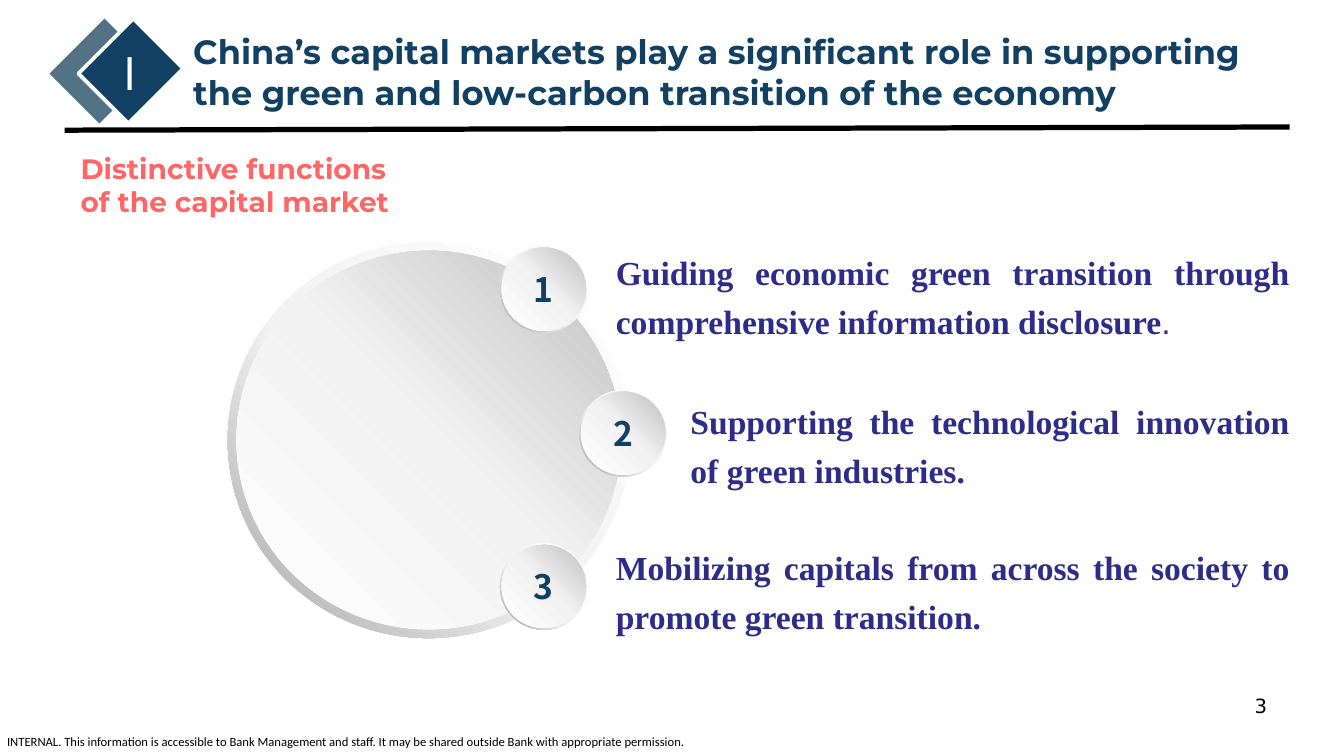
import copy

import pptx
import pptx.dml.color
import pptx.enum.shapes
import pptx.enum.text
import pptx.oxml.ns
import pptx.oxml.xmlchemy
import pptx.util

Cm = pptx.util.Cm
Pt = pptx.util.Pt
RGBColor = pptx.dml.color.RGBColor
SHAPE = pptx.enum.shapes.MSO_SHAPE
ALIGN = pptx.enum.text.PP_ALIGN
ANCHOR = pptx.enum.text.MSO_ANCHOR
qn = pptx.oxml.ns.qn

BLACK = RGBColor(0, 0, 0)
WHITE = RGBColor(255, 255, 255)
NAVY = RGBColor(0x12, 0x40, 0x62)
SLATE = RGBColor(0x53, 0x72, 0x85)
CORAL = RGBColor(0xFF, 0x66, 0x66)
INDIGO = RGBColor(0x2D, 0x2D, 0x89)
PALE = RGBColor(0xF2, 0xF2, 0xF2)
SILVER = RGBColor(0xBF, 0xBF, 0xBF)
GREY = RGBColor(0xA6, 0xA6, 0xA6)

RIM_STOPS = [(0, WHITE), (0.55, PALE), (1, GREY)]
FACE_STOPS = [(0, WHITE), (0.51, PALE), (1, SILVER)]


class SlideBuilder:
    def __init__(self, slide):
        self.slide = slide

    def shape(self, kind, x, y, w, h):
        """Add a preset shape with neither line nor shadow."""
        sp = self.slide.shapes.add_shape(kind, Cm(x), Cm(y), Cm(w), Cm(h))
        sp.shadow.inherit = False
        sp.line.fill.background()
        return sp

    def diamond(self, x, y, color, outline=None):
        sp = self.shape(SHAPE.ROUNDED_RECTANGLE, x, y, 1.78, 1.96)
        sp.adjustments[0] = 0
        sp.rotation = 45
        sp.fill.solid()
        sp.fill.fore_color.rgb = color
        if outline is not None:
            sp.line.color.rgb = outline
            sp.line.width = Pt(2.75)

    def gradient(self, sp, stops, angle):
        """Fill with three stops; the angle runs counter-clockwise."""
        fill = sp.fill
        fill.gradient()
        fill.gradient_angle = angle
        stop_list = sp._element.spPr.find(".//" + qn("a:gsLst"))
        stop_list.append(copy.deepcopy(stop_list[-1]))
        for stop, (position, color) in zip(fill.gradient_stops, stops):
            stop.position = position
            stop.color.rgb = color

    def disc(self, x, y, w, h, inset):
        """Add a rimmed disc and return its face."""
        rim = self.shape(SHAPE.DONUT, x, y, w, h)
        rim.adjustments[0] = 0.049
        self.gradient(rim, RIM_STOPS, 225)
        face = self.shape(SHAPE.OVAL, x + inset, y + inset, w - 2 * inset, h - 2 * inset)
        self.gradient(face, FACE_STOPS, 45)
        return face

    def badge(self, x, y, number):
        tf = self.disc(x, y, 2.21, 2.18, 0.04).text_frame
        tf.vertical_anchor = ANCHOR.MIDDLE
        p = tf.paragraphs[0]
        p.alignment = ALIGN.CENTER
        self.run(p, number, "Noto Sans CJK SC", 24, NAVY, True)

    def run(self, p, text, font, size, color, bold=False):
        r = p.add_run()
        r.text = text
        r.font.name = font
        r.font.size = Pt(size)
        r.font.color.rgb = color
        r.font.bold = bold
        for tag in ("a:ea", "a:cs"):
            face = r._r.rPr.makeelement(qn(tag), {"typeface": font})
            r._r.rPr.append(face)

    def text(self, x, y, w, h, lines, font, size, color, bold=False,
             align=ALIGN.LEFT, anchor=ANCHOR.TOP, padded=True):
        """Add a text box with one paragraph per line and return its frame."""
        tf = self.slide.shapes.add_textbox(Cm(x), Cm(y), Cm(w), Cm(h)).text_frame
        tf.word_wrap = True
        tf.vertical_anchor = anchor
        if not padded:
            tf.margin_left = tf.margin_right = tf.margin_top = tf.margin_bottom = 0
        for i, line in enumerate(lines):
            p = tf.add_paragraph() if i else tf.paragraphs[0]
            p.alignment = align
            self.run(p, line, font, size, color, bold)
        return tf

    def statement(self, x, y, text):
        """Add a justified statement ending at the right margin."""
        tf = self.text(x, y, 32.5 - x, 2.36, [text], "Times New Roman", 24, INDIGO,
                       True, align=ALIGN.JUSTIFY, padded=False)
        tf.paragraphs[0].line_spacing = 1.2
        return tf.paragraphs[0]

    def rule(self, x1, y1, x2, y2):
        line = self.slide.shapes.add_connector(
            pptx.enum.shapes.MSO_CONNECTOR.STRAIGHT, Cm(x1), Cm(y1), Cm(x2), Cm(y2))
        line.line.color.rgb = BLACK
        line.line.width = Pt(3.75)
        spPr = line._element.spPr
        spPr.append(spPr.makeelement(qn("a:effectLst"), {}))


def main():
    prs = pptx.Presentation()
    prs.slide_width, prs.slide_height = Cm(33.87), Cm(19.05)
    s = SlideBuilder(prs.slides.add_slide(prs.slide_layouts[6]))

    s.text(0.18, 18.49, 18, 0.38,
           ["INTERNAL. This information is accessible to Bank Management and staff. "
            "It may be shared outside Bank with appropriate permission."],
           "Calibri", 9, BLACK, padded=False)

    s.diamond(1.68, 0.81, SLATE)
    s.diamond(2.41, 0.81, NAVY, WHITE)
    s.text(4.62, 0.66, 28.42, 2.31,
           ["China’s capital markets play a significant role in supporting",
            "the green and low-carbon transition of the economy"],
           "Montserrat", 24, NAVY, True)
    s.text(2.87, 1.02, 0.84, 1.63, ["I"], "Noto Sans CJK SC", 32, WHITE)
    s.rule(1.63, 3.28, 32.5, 3.2)
    s.text(24.28, 17.35, 7.9, 1.32, ["3"], "DejaVu Sans", 14, BLACK, align=ALIGN.RIGHT)
    s.text(1.78, 3.71, 8.97, 1.9, ["Distinctive functions of the capital market"],
           "Montserrat", 20, CORAL, True, anchor=ANCHOR.MIDDLE)

    s.disc(5.74, 6.1, 10.13, 9.98, 0.22)
    items = [
        (12.6, 6.2, 15.52, 6.15, "Guiding economic green transition through "
                                 "comprehensive information disclosure"),
        (14.6, 9.83, 17.4, 9.91, "Supporting the technological innovation of green industries."),
        (12.6, 13.69, 15.52, 13.59, "Mobilizing capitals from across the society to "
                                    "promote green transition."),
    ]
    paragraphs = []
    for number, (badge_x, badge_y, text_x, text_y, text) in enumerate(items, 1):
        s.badge(badge_x, badge_y, str(number))
        paragraphs.append(s.statement(text_x, text_y, text))
    s.run(paragraphs[0], ".", "Arial", 24, INDIGO)

    prs.save("out.pptx")


if __name__ == "__main__":
    main()
